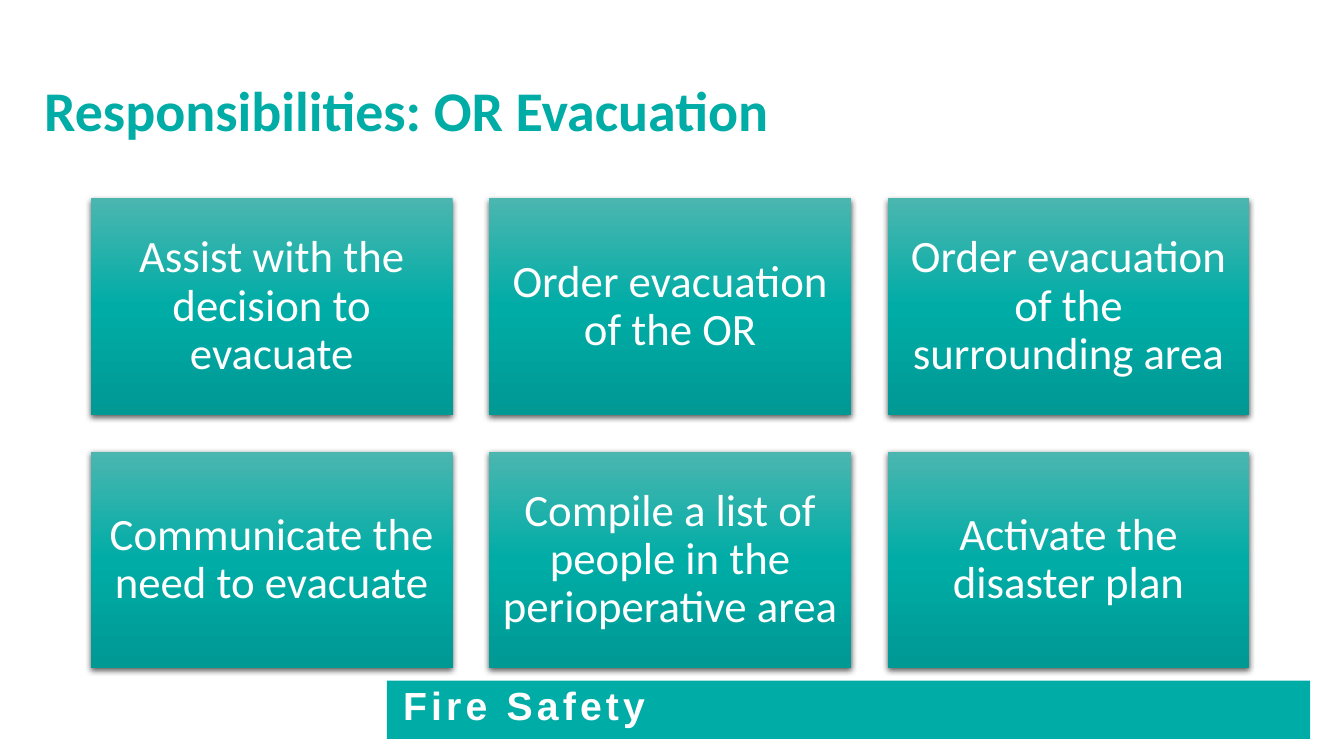
from lxml import etree
from pptx import Presentation
from pptx.dml.color import RGBColor
from pptx.enum.shapes import MSO_SHAPE
from pptx.enum.text import MSO_ANCHOR, MSO_AUTO_SIZE, PP_ALIGN
from pptx.oxml.ns import qn
from pptx.util import Cm, Pt

TITLE = "Responsibilities: OR Evacuation"
FOOTER = "Fire Safety"
DUTIES = [
    "Assist with the decision to evacuate",
    "Order evacuation of the OR",
    "Order evacuation of the surrounding area",
    "Communicate the need to evacuate",
    "Compile a list of people in the perioperative area",
    "Activate the disaster plan",
]

TEAL = RGBColor(0x00, 0xAC, 0xA6)
LIGHT_TEAL = RGBColor(0x4B, 0xB6, 0xB0)
DARK_TEAL = RGBColor(0x00, 0x99, 0x94)
WHITE = RGBColor(0xFF, 0xFF, 0xFF)
BLACK = RGBColor(0x00, 0x00, 0x00)
GRADIENT = [(0, LIGHT_TEAL), (50, TEAL), (100, DARK_TEAL)]

RECTANGLE = MSO_SHAPE.RECTANGLE
MIDDLE, TOP = MSO_ANCHOR.MIDDLE, MSO_ANCHOR.TOP
LEFT, CENTER = PP_ALIGN.LEFT, PP_ALIGN.CENTER
NO_AUTOFIT = MSO_AUTO_SIZE.NONE

COLUMNS = 3
GRID_LEFT, GRID_TOP = 2.29, 5.0
CARD_WIDTH, CARD_HEIGHT, GAP = 9.12, 5.46, 0.92


def add_child(parent, tag, **attributes):
    """Append a drawing element with the given attributes."""
    values = {name: str(value) for name, value in attributes.items()}
    return etree.SubElement(parent, qn(tag), values)


def write_text(shape, text, size, font_name, color, alignment, anchor, spacing):
    """Write one formatted paragraph into a shape."""
    frame = shape.text_frame
    frame.text = text
    frame.word_wrap = True
    frame.auto_size = NO_AUTOFIT
    frame.vertical_anchor = anchor
    paragraph = frame.paragraphs[0]
    paragraph.alignment = alignment
    paragraph.line_spacing = spacing
    font = paragraph.font
    font.name, font.size = font_name, Pt(size)
    font.color.rgb = color
    return paragraph


def add_rectangle(slide, left, top, width, height):
    """Add a plain teal rectangle, measured in centimetres."""
    shape = slide.shapes.add_shape(RECTANGLE, Cm(left), Cm(top), Cm(width), Cm(height))
    shape.fill.solid()
    shape.fill.fore_color.rgb = TEAL
    shape.line.fill.background()
    shape.shadow.inherit = False
    return shape


def add_gradient_and_shadow(shape):
    """Give a shape the vertical teal gradient and a soft shadow."""
    shape.fill.gradient()
    shape.fill.gradient_angle = 270
    properties = shape._element.spPr
    stops = properties.find(qn("a:gradFill")).find(qn("a:gsLst"))
    for stop in list(stops):
        stops.remove(stop)
    for position, color in GRADIENT:
        stop = add_child(stops, "a:gs", pos=position * 1000)
        add_child(stop, "a:srgbClr", val=color)
    effects = properties.find(qn("a:effectLst"))
    shadow = add_child(effects, "a:outerShdw", blurRad=Pt(4.5), dist=Pt(1.5),
                       dir=90 * 60000, algn="ctr", rotWithShape=0)
    shadow_color = add_child(shadow, "a:srgbClr", val=BLACK)
    add_child(shadow_color, "a:alpha", val=63000)


def add_card(slide, index, text):
    """Add one duty card at its place in the grid."""
    row, column = divmod(index, COLUMNS)
    card = add_rectangle(slide, GRID_LEFT + column * (CARD_WIDTH + GAP),
                         GRID_TOP + row * (CARD_HEIGHT + GAP), CARD_WIDTH, CARD_HEIGHT)
    add_gradient_and_shadow(card)
    frame = card.text_frame
    frame.margin_left = frame.margin_right = Cm(0.33)
    frame.margin_top = frame.margin_bottom = Cm(0.33)
    write_text(card, text, 32, "Calibri", WHITE, CENTER, MIDDLE, 0.9)


def add_footer(slide):
    """Add the teal footer band with its spaced-out label."""
    band = add_rectangle(slide, 9.75, 17.15, 23.27, 1.47)
    band.text_frame.margin_left = Cm(0.41)
    band.text_frame.margin_top = Cm(0.25)
    paragraph = write_text(band, FOOTER, 28, "Arial", WHITE, LEFT, TOP, 0.8)
    paragraph.font.bold = True
    paragraph.runs[0].font._element.set("spc", "300")


def main():
    """Build the slide and save it."""
    presentation = Presentation()
    presentation.slide_width, presentation.slide_height = Cm(33.87), Cm(19.05)
    slide = presentation.slides.add_slide(presentation.slide_layouts[5])
    title = slide.shapes.title
    title.left, title.top, title.width, title.height = Cm(0.86), Cm(1.02), Cm(32.16), Cm(3.68)
    write_text(title, TITLE, 40, "Calibri", TEAL, LEFT, MIDDLE, 0.9).font.bold = True
    add_footer(slide)
    for index, duty in enumerate(DUTIES):
        add_card(slide, index, duty)
    presentation.save("out.pptx")


if __name__ == "__main__":
    main()
